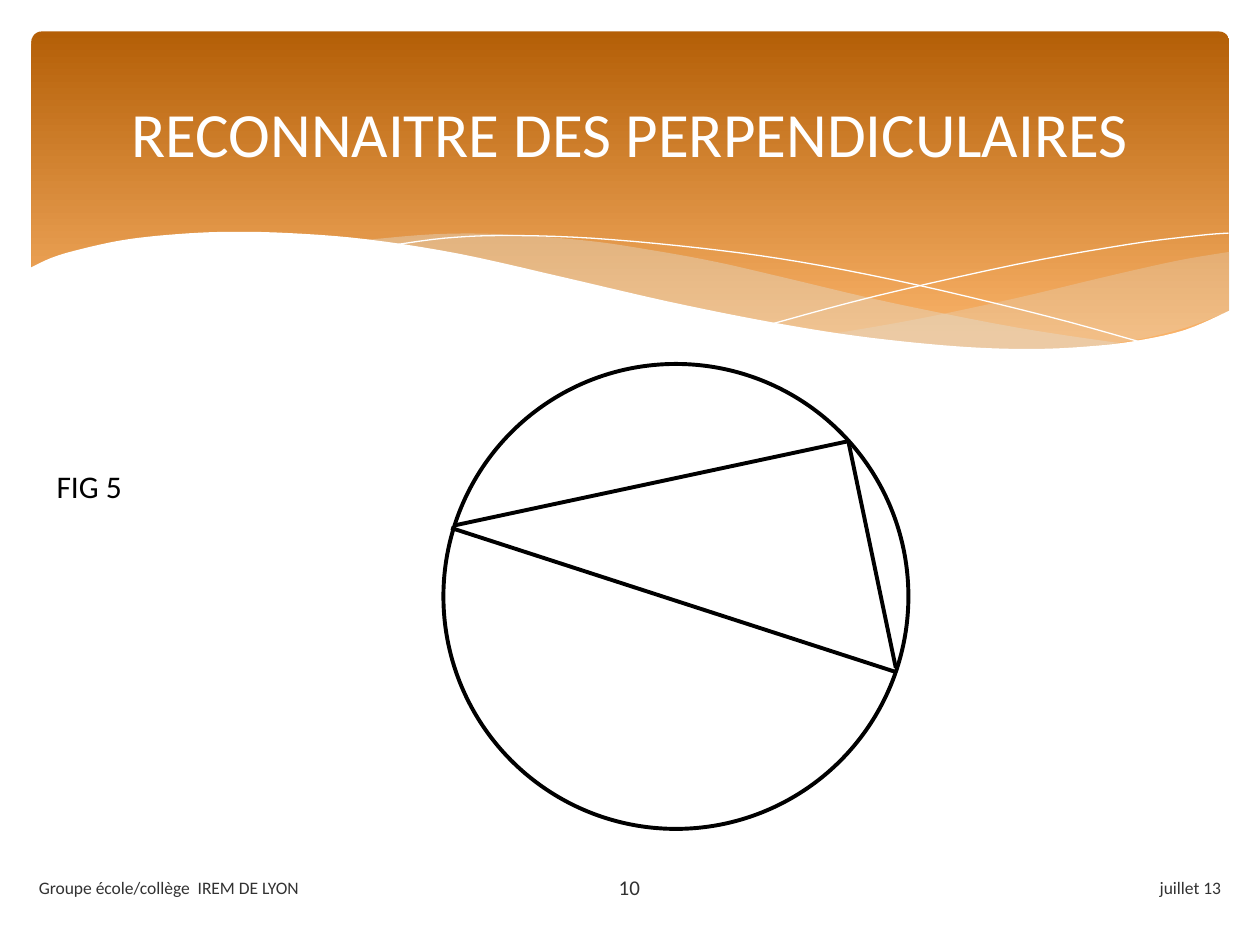
from dataclasses import dataclass

from lxml.etree import SubElement
from pptx import Presentation
from pptx.dml.color import RGBColor
from pptx.enum.shapes import MSO_CONNECTOR as Connector, MSO_SHAPE as Shape
from pptx.enum.text import MSO_ANCHOR as Anchor, MSO_AUTO_SIZE as Fit, PP_ALIGN as Align
from pptx.oxml.ns import qn
from pptx.util import Pt


@dataclass(frozen=True)
class Theme:
    """Colours, font and type sizes of the slide."""
    font: str = "Calibri"
    band_top: str = "B45F07"
    band_bottom: str = "F9B268"
    veil: str = "E3DED1"
    white: str = "FFFFFF"
    ink: str = "000000"
    footer_ink: str = "323232"
    title: int = 36
    label: int = 18
    number: int = 12
    footer: int = 10
    stroke: float = 2.25
    hairline: float = 0


THEME = Theme()

RIGHT_VEIL_TOP = [(702, 144), (672.5, 149), (630.7, 158.4), (579.6, 170.6),
                  (524.9, 182.2), (475.9, 190.8)]
RIGHT_VEIL_BOTTOM = [(475.9, 190.8), (517.7, 196.6), (553.7, 199.4), (586.1, 199.8),
                     (621.4, 198), (651.6, 193.7), (678.2, 187), (702.7, 177.8)]
LEFT_VEIL_TOP = [(643, 196.6), (581, 187.2), (508.3, 172.8), (452.9, 159.8), (409.7, 149.8),
                 (370.1, 142.6), (334.8, 137.5), (287.3, 133.9), (247.7, 133.9), (205.9, 137.5)]
LEFT_VEIL_BOTTOM = [(205.9, 137.5), (260.6, 146.2), (323.3, 159.8), (407.5, 178.6), (468, 190),
                    (520.6, 197.3), (565.2, 200.2), (603.4, 200.2), (643, 196.6)]
FALLING_LINE = [(222.5, 140.4), (254.2, 136.1), (288.7, 134.6), (337.7, 136.1), (400.3, 141.8),
                (457.9, 149.8), (523.4, 162.7), (598.3, 180.7), (653, 195.8)]
RISING_LINE = [(441.4, 185), (500.4, 169.2), (580.3, 151.2), (644.4, 139.7),
               (684.7, 134.6), (702, 133.2)]
WAVE = [(16.6, 153.4), (28.8, 147.6), (42.5, 143.3), (68.4, 137.5), (95, 134.3), (127.4, 132.5),
        (165.6, 133.2), (210.2, 136.8), (262.8, 145.1), (321.8, 158.4), (380.9, 172.1),
        (434.2, 182.9), (481, 190.8), (522.7, 195.8), (559.4, 198.7), (592.6, 199.4),
        (621.4, 198), (647.3, 195.1), (677, 188.6), (703.4, 177.1)]
WAVE_FOOT = [(703.4, 236.9), (16.6, 236.9)]
CHORDS = [((257.8, 301.7), (511.2, 383.8)),
          ((259.9, 300.2), (485.3, 252)),
          ((484.6, 251.3), (511.9, 381.6))]


def rgb(code):
    """Return the colour object of a hex code."""
    return RGBColor.from_string(code)


def smooth(knots, steps=5):
    """Return points of a Catmull-Rom curve through the knots."""
    padded = [knots[0], *knots, knots[-1]]
    curve = [knots[0]]
    for a, b, c, d in zip(padded, padded[1:], padded[2:], padded[3:]):
        for step in range(1, steps + 1):
            t = step / steps
            curve.append(tuple(
                (2 * q + (r - p) * t + (2 * p - 5 * q + 4 * r - s) * t ** 2
                 + (3 * q - p - 3 * r + s) * t ** 3) / 2
                for p, q, r, s in zip(a, b, c, d)))
    return curve


def add_outline(page, points, closed):
    """Draw a freeform through points and return it without shadow."""
    start, *rest = [(Pt(x), Pt(y)) for x, y in points]
    builder = page.shapes.build_freeform(*start, scale=1.0)
    builder.add_line_segments(rest, close=closed)
    outline = builder.convert_to_shape()
    outline.shadow.inherit = False
    return outline


def add_area(page, points, color, opacity=100):
    """Draw a filled area, see-through when opacity is below 100."""
    area = add_outline(page, points, True)
    area.line.fill.background()
    area.fill.solid()
    area.fill.fore_color.rgb = rgb(color)
    if opacity < 100:
        for code in area.element.spPr.iter(qn("a:srgbClr")):
            SubElement(code, qn("a:alpha"), val=str(opacity * 1000))


def set_line(line, color, width):
    """Give a line its colour and width."""
    line.color.rgb = rgb(color)
    line.width = Pt(width)


def add_curve(page, knots):
    """Draw a thin white curve through the knots."""
    curve = add_outline(page, smooth(knots), False)
    curve.fill.background()
    set_line(curve.line, THEME.white, THEME.hairline)


def add_band(page):
    """Draw the header band with its gradient."""
    band = page.shapes.add_shape(Shape.ROUNDED_RECTANGLE, Pt(18), Pt(18), Pt(684.5), Pt(194.4))
    band.adjustments[0] = 0.03
    band.shadow.inherit = False
    band.line.fill.background()
    band.fill.gradient()
    band.fill.gradient_angle = 270
    looks = [(0, THEME.band_top), (0.9, THEME.band_bottom)]
    for stop, (position, color) in zip(band.fill.gradient_stops, looks):
        stop.position = position
        stop.color.rgb = rgb(color)


def add_header(page):
    """Draw the band, its veils and curves, and the white wave."""
    add_band(page)
    right_veil = smooth(RIGHT_VEIL_TOP) + smooth(RIGHT_VEIL_BOTTOM) + [(702.7, 144)]
    add_area(page, right_veil, THEME.veil, 29)
    add_area(page, smooth(LEFT_VEIL_TOP) + smooth(LEFT_VEIL_BOTTOM), THEME.veil, 40)
    add_curve(page, FALLING_LINE)
    add_curve(page, RISING_LINE)
    add_area(page, smooth(WAVE) + WAVE_FOOT, THEME.white)


def write(box, text, size, color, align=Align.LEFT, anchor=Anchor.MIDDLE, fit=Fit.NONE):
    """Write one formatted line into a box."""
    frame = box.text_frame
    frame.word_wrap = True
    frame.auto_size = fit
    frame.vertical_anchor = anchor
    para = frame.paragraphs[0]
    para.alignment = align
    span = para.add_run()
    span.text = text
    span.font.name = THEME.font
    span.font.size = Pt(size)
    span.font.color.rgb = rgb(color)


def add_text(page, left, top, width, *args, **options):
    """Add a one-line text box."""
    box = page.shapes.add_textbox(Pt(left), Pt(top), Pt(width), Pt(28.8))
    write(box, *args, **options)


def add_title(page, text):
    """Fill the title placeholder and bring it above the band."""
    title = page.shapes.title
    title.left, title.top, title.width, title.height = Pt(36), Pt(26.6), Pt(648), Pt(98.6)
    write(title, text, THEME.title, THEME.white, Align.CENTER)
    title.element.getparent().append(title.element)


def add_circle(page):
    """Draw the circle around the triangle."""
    circle = page.shapes.add_shape(Shape.OVAL, Pt(253.4), Pt(208), Pt(265.7), Pt(265.7))
    circle.rotation = 18
    circle.shadow.inherit = False
    circle.fill.solid()
    circle.fill.fore_color.rgb = rgb(THEME.white)
    set_line(circle.line, THEME.ink, THEME.stroke)


def add_chord(page, start, end):
    """Draw one side of the triangle."""
    ends = [Pt(value) for value in (*start, *end)]
    chord = page.shapes.add_connector(Connector.STRAIGHT, *ends)
    set_line(chord.line, THEME.ink, THEME.stroke)
    SubElement(chord.element.spPr, qn("a:effectLst"))


def main():
    """Build and save the slide."""
    deck = Presentation()
    deck.slide_width, deck.slide_height = Pt(720), Pt(540)
    page = deck.slides.add_slide(deck.slide_layouts[5])
    add_header(page)
    for left, width, text, size, align in [
        (406.8, 298, "juillet 13", THEME.footer, Align.RIGHT),
        (15.1, 298, "Groupe école/collège  IREM DE LYON", THEME.footer, Align.LEFT),
        (313.9, 91.4, "10", THEME.number, Align.CENTER),
    ]:
        add_text(page, left, 492.5, width, text, size, THEME.footer_ink, align)
    add_text(page, 25.2, 263.5, 118.8, "FIG 5", THEME.label, THEME.ink,
             anchor=Anchor.TOP, fit=Fit.SHAPE_TO_FIT_TEXT)
    add_title(page, "RECONNAITRE DES PERPENDICULAIRES")
    add_circle(page)
    for start, end in CHORDS:
        add_chord(page, start, end)
    deck.save("out.pptx")


if __name__ == "__main__":
    main()
